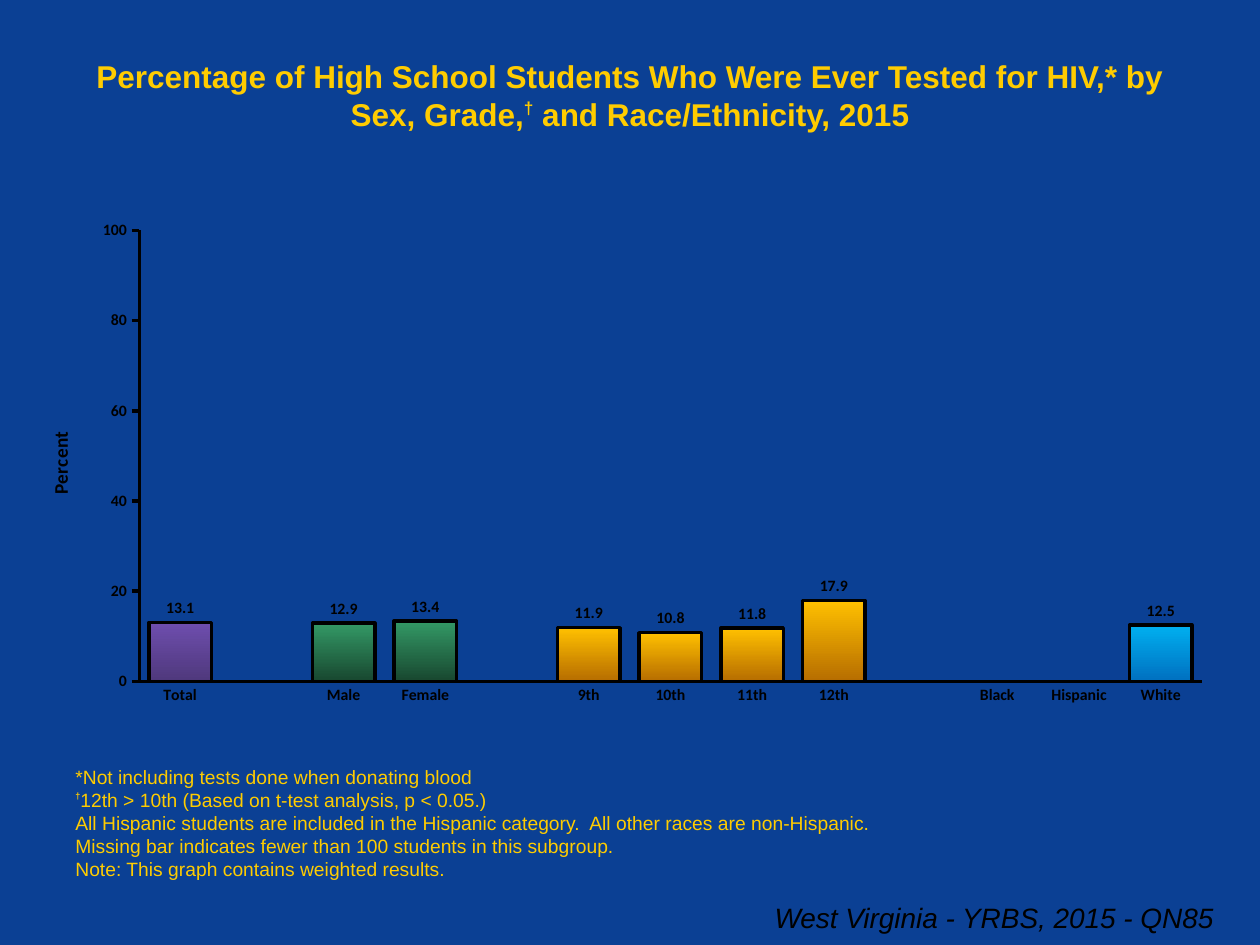
from lxml import etree
from pptx import Presentation
from pptx import util as u
from pptx.chart.data import CategoryChartData
from pptx.dml.color import RGBColor
from pptx.enum import chart as ch, text
from pptx.oxml.ns import qn

COLORS = {
    "background": "0B4094", "heading": "FFCC00", "ink": "000000",
    "total": ("6E4EAE", "4F387C"), "sex": ("339966", "18472F"),
    "grade": ("FFC000", "B66D00"), "race": ("00B0F0", "0070C0"),
}
GROUPS = {
    "total": {"Total": 13.1},
    "sex": {"Male": 12.9, "Female": 13.4},
    "grade": {"9th": 11.9, "10th": 10.8, "11th": 11.8, "12th": 17.9},
    "race": {"Black": None, "Hispanic": None, "White": 12.5},
}


def rgb(value):
    return RGBColor.from_string(value)


def style_font(font, size, color="ink", name="Calibri", bold=False, italic=False):
    font.size, font.name, font.bold, font.italic = u.Pt(size), name, bold, italic
    font.color.rgb = rgb(COLORS[color])


def add_run(paragraph, words, raised=0, **style):
    """Add a run; raised is the superscript offset in percent."""
    run = paragraph.add_run()
    run.text = words
    style_font(run.font, name="Arial", **style)
    if raised:
        run.font._element.set("baseline", str(raised * 1000))


def black_line(line):
    line.color.rgb = rgb(COLORS["ink"])
    line.width = u.Pt(2)


def set_plot_layout(chart, **fractions):
    """Fix the inner plot area as fractions of the chart frame."""
    plot_area = chart._chartSpace.chart.plotArea
    for old in plot_area.findall(qn("c:layout")):
        plot_area.remove(old)
    layout = etree.Element(qn("c:layout"))
    manual = etree.SubElement(layout, qn("c:manualLayout"))
    settings = {"layoutTarget": "inner", "xMode": "edge", "yMode": "edge", **fractions}
    for tag, value in settings.items():
        etree.SubElement(manual, qn("c:" + tag)).set("val", str(value))
    plot_area.insert(0, layout)


class SlideBuilder:
    def __init__(self, slide):
        self.slide = slide
        slide.background.fill.solid()
        slide.background.fill.fore_color.rgb = rgb(COLORS["background"])

    def text_box(self, box, paragraphs, align=text.PP_ALIGN.LEFT,
                 anchor=text.MSO_ANCHOR.TOP, **style):
        """Each paragraph is a list of (words, format overrides)."""
        frame = self.slide.shapes.add_textbox(*map(u.Cm, box)).text_frame
        frame.word_wrap = True
        frame.auto_size = text.MSO_AUTO_SIZE.SHAPE_TO_FIT_TEXT
        frame.vertical_anchor = anchor
        for index, runs in enumerate(paragraphs):
            paragraph = frame.add_paragraph() if index else frame.paragraphs[0]
            paragraph.alignment = align
            for words, overrides in runs:
                add_run(paragraph, words, **{**style, **overrides})

    def column_chart(self, box, groups):
        """Draw the groups as columns with an empty slot between groups."""
        columns = []
        for group, values in groups.items():
            if columns:
                columns.append((None, "", None))
            columns += [(group, label, value) for label, value in values.items()]
        data = CategoryChartData(number_format="#,##0.0")
        data.categories = [label for _, label, _ in columns]
        data.add_series("Series 1", [value for _, _, value in columns])
        chart = self.slide.shapes.add_chart(
            ch.XL_CHART_TYPE.COLUMN_CLUSTERED, *map(u.Cm, box), data).chart
        style_font(chart.font, 18)
        chart.has_legend = chart.has_title = False
        set_plot_layout(chart, x=0.098, y=0.04, w=0.882, h=0.895)

        plot = chart.plots[0]
        plot.gap_width, plot.overlap, plot.vary_by_categories = 31, 100, False
        series = plot.series[0]
        series.format.fill.solid()
        series.format.fill.fore_color.rgb = rgb("4F81BD")
        black_line(series.format.line)
        for index, (group, _, _) in enumerate(columns):
            if group:
                self.shade(series.points[index].format, COLORS[group])

        labels = series.data_labels
        labels.show_value = True
        labels.number_format, labels.number_format_is_linked = "#,##0.0", False
        labels.position = ch.XL_LABEL_POSITION.OUTSIDE_END
        style_font(labels.font, 9, bold=True)
        self.axes(chart.category_axis, chart.value_axis)

    def shade(self, point, stops):
        """Fill a column from top colour to bottom colour."""
        point.fill.gradient()
        point.fill.gradient_angle = 270
        for stop, color, position in zip(point.fill.gradient_stops, stops, (0, 1)):
            stop.color.rgb, stop.position = rgb(color), position
        black_line(point.line)

    def axes(self, categories, percent):
        for axis in (categories, percent):
            axis.has_major_gridlines = False
            axis.minor_tick_mark = ch.XL_TICK_MARK.NONE
            style_font(axis.tick_labels.font, 9, bold=True)
            black_line(axis.format.line)
        categories.major_tick_mark = ch.XL_TICK_MARK.NONE
        percent.major_tick_mark = ch.XL_TICK_MARK.OUTSIDE
        percent.minimum_scale, percent.maximum_scale, percent.major_unit = 0, 100, 20
        percent.tick_labels.number_format = "General"
        percent.tick_labels.number_format_is_linked = False
        frame = percent.axis_title.text_frame
        frame.text = "Percent"
        style_font(frame.paragraphs[0].runs[0].font, 11, bold=True)
        body = frame._txBody.find(qn("a:bodyPr"))
        body.set("rot", "-5400000")
        body.set("vert", "horz")


def main():
    deck = Presentation()
    deck.slide_width, deck.slide_height = u.Cm(25.4), u.Cm(19.05)
    builder = SlideBuilder(deck.slides.add_slide(deck.slide_layouts[6]))

    builder.text_box((1.27, 1.02, 22.86, 1.02), [[
        ("Percentage of High School Students Who Were Ever Tested for HIV,* by Sex, Grade,", {}),
        ("†", {"size": 17, "raised": 40}),
        (" and Race/Ethnicity, 2015", {}),
    ]], align=text.PP_ALIGN.CENTER, size=18, color="heading", bold=True)

    builder.text_box((1.27, 17.15, 22.86, 0.73), [
        [("*Not including tests done when donating blood", {})],
        [("†", {"size": 9, "bold": True, "raised": 50}),
         ("12th > 10th (Based on t-test analysis, p < 0.05.)", {})],
        [("All Hispanic students are included in the Hispanic category.  "
          "All other races are non-Hispanic.", {})],
        [("Missing bar indicates fewer than 100 students in this subgroup.", {})],
        [("Note: This graph contains weighted results.", {})],
    ], anchor=text.MSO_ANCHOR.BOTTOM, size=11, color="heading")

    builder.text_box((0.84, 18.03, 23.88, 0.94),
                     [[("West Virginia - YRBS, 2015 - QN85", {})]],
                     align=text.PP_ALIGN.RIGHT, size=16, italic=True)

    builder.column_chart((0.43, 4.24, 24.28, 10.16), GROUPS)
    deck.save("out.pptx")


if __name__ == "__main__":
    main()
